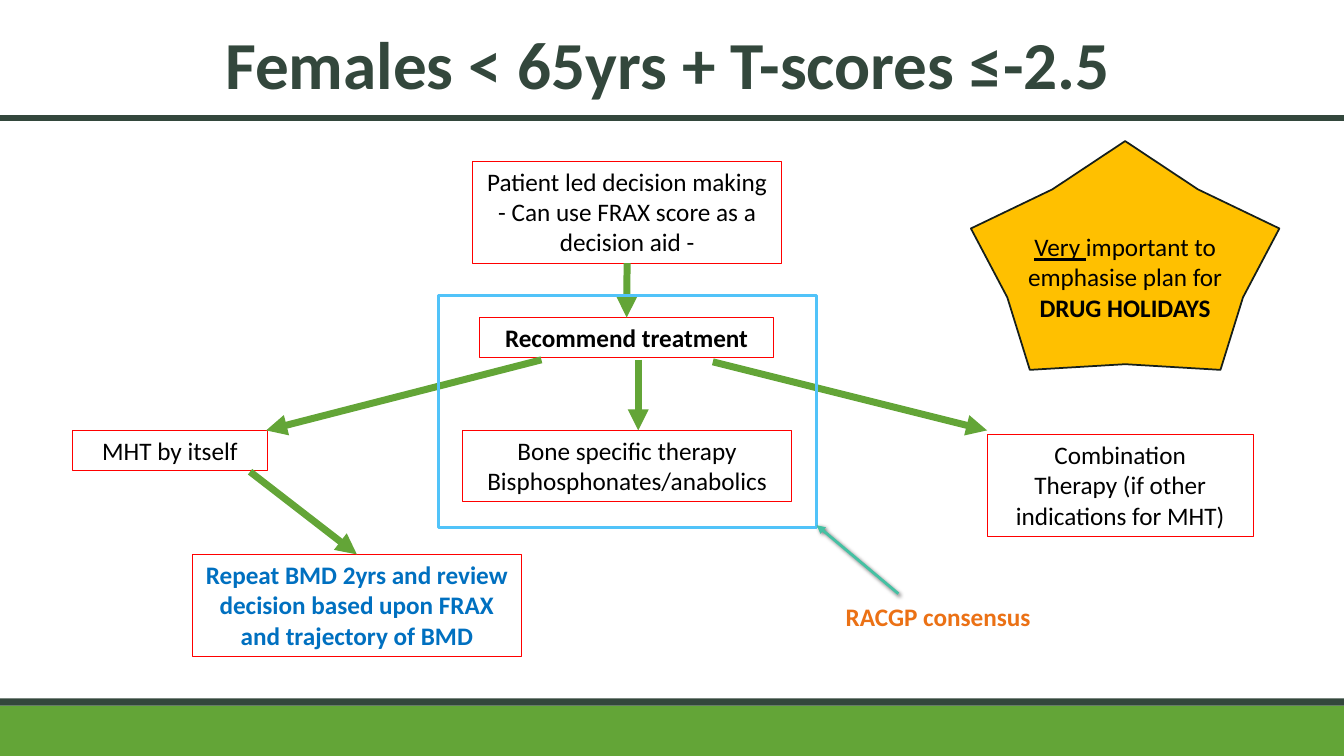
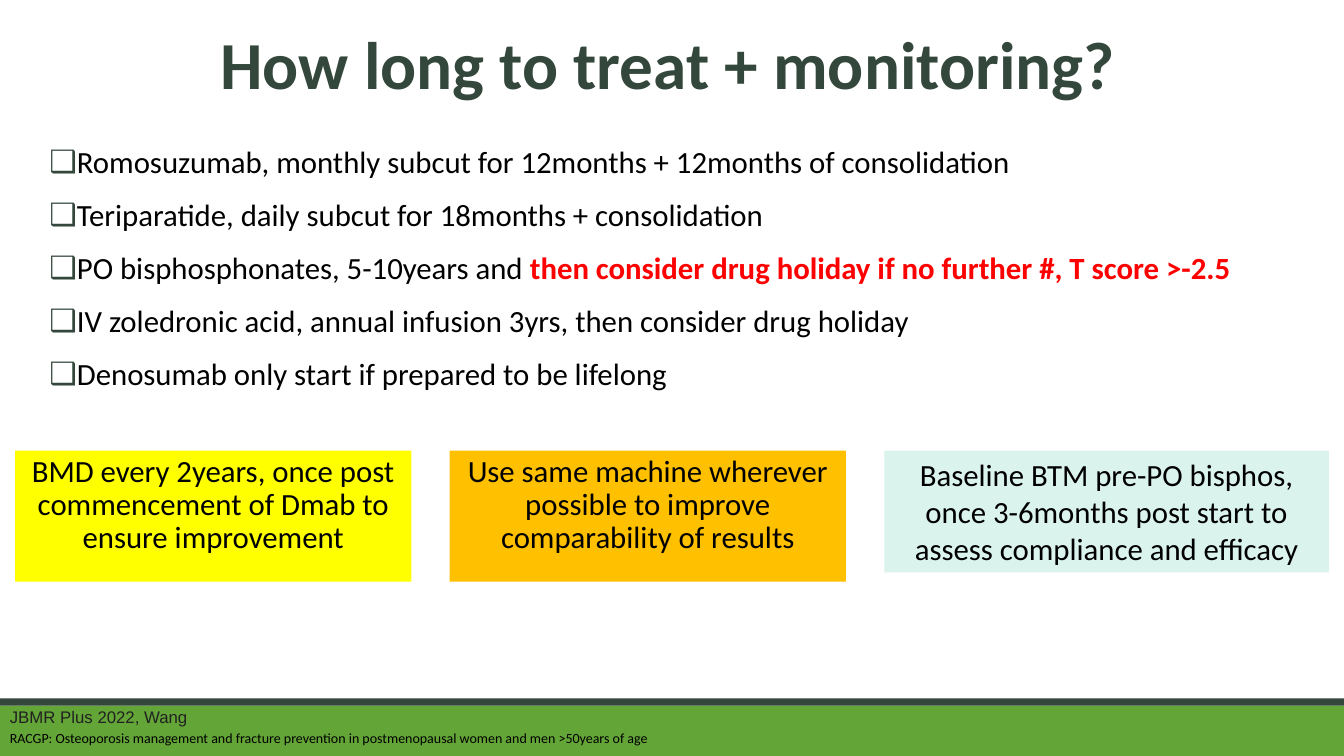
from lxml import etree
from pptx import Presentation
from pptx.dml.color import RGBColor
from pptx.enum.shapes import MSO_CONNECTOR as CONN, MSO_SHAPE as SHAPE
from pptx.enum.text import MSO_ANCHOR as ANCHOR, MSO_AUTO_SIZE as AUTO, PP_ALIGN as ALIGN
from pptx.oxml.ns import qn
from pptx.util import Inches, Pt

FONT = "Calibri"
WIDTH, HEIGHT = 13.33, 7.5
BLACK, WHITE, RED = "000000", "FFFFFF", "FF0000"
GREEN, DARK, AMBER = "63A537", "33473C", "FFC000"


def paint(target, color):
    """Colour a fill, a line fill or a font."""
    if hasattr(target, "solid"):
        target.solid()
        target.fore_color.rgb = RGBColor.from_string(color)
    else:
        target.color.rgb = RGBColor.from_string(color)


def add_bullet(p, char, color):
    """Give a paragraph a coloured bullet with a small hanging indent."""
    pPr = p._p.get_or_add_pPr()
    pPr.set("marL", str(Inches(0.1)))
    pPr.set("indent", str(Inches(-0.1)))
    clr = etree.SubElement(pPr, qn("a:buClr"))
    etree.SubElement(clr, qn("a:srgbClr"), val=color)
    etree.SubElement(pPr, qn("a:buFont"), typeface="Arial")
    etree.SubElement(pPr, qn("a:buChar"), char=char)


def write(tf, paras, size=18, color=BLACK, bold=False, font=FONT, align=ALIGN.CENTER,
          anchor=ANCHOR.TOP, spacing=1.0, before=0, after=0, bullet=None):
    """Fill a text frame with paragraphs of plain strings or (text, format) runs."""
    tf.word_wrap, tf.auto_size, tf.vertical_anchor = True, AUTO.NONE, anchor
    for i, runs in enumerate([paras] if isinstance(paras, str) else paras):
        p = tf.add_paragraph() if i else tf.paragraphs[0]
        if bullet:
            add_bullet(p, bullet, DARK)
        p.alignment, p.line_spacing = align, spacing
        p.space_before, p.space_after = Pt(before if i else 0), Pt(after)
        for text, fmt in [(runs, {})] if isinstance(runs, str) else runs:
            r = p.add_run()
            r.text = text
            r.font.name, r.font.size = font, Pt(size)
            r.font.bold = fmt.get("bold", bold)
            r.font.underline = fmt.get("underline", False)
            paint(r.font, fmt.get("color", color))


def place(sp, x, y, w, h):
    """Move and size a shape in inches."""
    sp.left, sp.top, sp.width, sp.height = map(Inches, (x, y, w, h))


def add_box(s, x, y, w, h, paras=None, fill=None, line=None, weight=0.75,
            shape=SHAPE.RECTANGLE, **fmt):
    """Draw a preset shape with optional fill, outline and text."""
    sp = s.shapes.add_shape(shape, *map(Inches, (x, y, w, h)))
    sp.shadow.inherit = False
    if fill:
        paint(sp.fill, fill)
    else:
        sp.fill.background()
    if line:
        paint(sp.line.fill, line)
        sp.line.width = Pt(weight)
    else:
        sp.line.fill.background()
    if paras:
        write(sp.text_frame, paras, **fmt)
    return sp


def add_label(s, x, y, w, h, paras, **fmt):
    """Add a plain text box."""
    write(s.shapes.add_textbox(*map(Inches, (x, y, w, h))).text_frame, paras, **fmt)


def add_line(s, x1, y1, x2, y2, color=GREEN, weight=5, arrow=True, shadow=False):
    """Draw a straight line, with an arrowhead at its end by default."""
    c = s.shapes.add_connector(CONN.STRAIGHT, *map(Inches, (x1, y1, x2, y2)))
    paint(c.line.fill, color)
    c.line.width = Pt(weight)
    if arrow:
        etree.SubElement(c.line._get_or_add_ln(), qn("a:tailEnd"), type="triangle")
    effects = etree.SubElement(c._element.spPr, qn("a:effectLst"))
    if shadow:
        outer = etree.SubElement(effects, qn("a:outerShdw"), blurRad=str(Pt(3)),
                                 dist=str(Pt(2)), dir="2700000", rotWithShape="0")
        clr = etree.SubElement(outer, qn("a:srgbClr"), val=BLACK)
        etree.SubElement(clr, qn("a:alpha"), val="60000")
    return c


def add_master_bands(prs, s):
    """Draw the footer bands and move them to the slide master."""
    tree = prs.slide_master.shapes.element
    for i, (y, h, color) in enumerate([(7, 0.5, GREEN), (6.93, 0.07, DARK)]):
        tree.insert(2 + i, add_box(s, 0, y, WIDTH, h, fill=color)._element)


def set_title(s, text):
    """Place and format the slide title."""
    place(s.shapes.title, 0.15, 0.29, 12.95, 0.99)
    write(s.shapes.title.text_frame, text, size=48, color=DARK, bold=True, spacing=0.85)


def decision_tree(s, x, y):
    """Draw the treatment flow chart from its top left corner."""
    def node(dx, dy, w, h, paras, **fmt):
        """Draw one red outlined step."""
        return add_box(s, x + dx, y + dy, w, h, paras, line=RED, **fmt)

    def arrow(x1, y1, x2, y2, **fmt):
        """Draw an arrow between two points of the chart."""
        return add_line(s, x + x1, y + y1, x + x2, y + y2, **fmt)

    patient = node(3.97, 0, 3.06, 1.01, ["Patient led decision making",
                                         "- Can use FRAX score as a decision aid -"])
    recommend = node(4.04, 1.55, 2.91, 0.4, "Recommend treatment", fill=WHITE, bold=True)
    node(0, 2.67, 1.93, 0.4, "MHT by itself")
    node(3.87, 2.67, 3.26, 0.71, "Bone specific therapy Bisphosphonates/anabolics")
    node(9.07, 2.71, 2.64, 1.01, ["Combination", "Therapy (if other indications for MHT)"])
    repeat = node(1.19, 3.9, 3.26, 1.01, "Repeat BMD 2yrs and review decision based upon "
                  "FRAX and trajectory of BMD", color="0070C0", bold=True)

    first = arrow(5.5, 1.01, 5.5, 1.55)
    first.begin_connect(patient, 2)
    first.end_connect(recommend, 0)
    for ends in [(5.61, 1.97, 5.61, 2.67), (6.35, 1.99, 9.07, 2.67),
                 (4.65, 1.97, 1.92, 2.67)]:
        arrow(*ends)
    arrow(1.76, 3.08, 2.82, 3.9).end_connect(repeat, 0)

    add_box(s, x + 3.63, y + 1.33, 3.75, 2.3, line="51C3F9", weight=2)
    arrow(8.19, 4.29, 7.38, 3.61, color="44C1A3", weight=2, shadow=True)
    add_label(s, x + 7.38, y + 4.32, 2.41, 0.4, "RACGP consensus", color="EB7115", bold=True)


def holiday_star(s, x, y, w, h):
    """Draw the star with the drug holiday reminder."""
    star = add_box(s, x, y, w, h, [[("Very ", {"underline": True}),
                                    ("important to emphasise plan for ", {}),
                                    ("DRUG HOLIDAYS", {"bold": True})]],
                   fill=AMBER, line="161F1A", weight=1.25, shape=SHAPE.STAR_5_POINT,
                   anchor=ANCHOR.MIDDLE)
    star.adjustments[0] = 0.382


def treatment_list(s, x, y, w, h):
    """Fill the body placeholder with the treatment durations."""
    body = s.placeholders[1]
    place(body, x, y, w, h)
    write(body.text_frame, [
        "Romosuzumab, monthly subcut for 12months + 12months of consolidation",
        "Teriparatide, daily subcut for 18months + consolidation",
        [("PO bisphosphonates, 5-10years and ", {}),
         ("then consider drug holiday if no further #, T score >-2.5",
          {"color": RED, "bold": True})],
        "IV zoledronic acid, annual infusion 3yrs, then consider drug holiday",
        "Denosumab only start if prepared to be lifelong",
    ], size=22, align=ALIGN.LEFT, spacing=0.9, before=12, after=2, bullet="❑")


def monitoring_row(s, x, y, gap):
    """Draw the three monitoring notes side by side."""
    for w, h, fill, spacing, text in [
        (3.93, 1.3, "FFFF00", 0.9,
         "BMD every 2years, once post commencement of Dmab to ensure improvement"),
        (3.93, 1.3, AMBER, 0.9,
         "Use same machine wherever possible to improve comparability of results"),
        (4.41, 1.21, "DAF3ED", 1.0,
         "Baseline BTM pre-PO bisphos, once 3-6months post start to assess compliance "
         "and efficacy"),
    ]:
        add_box(s, x, y, w, h, text, fill=fill, size=22, spacing=spacing)
        x += w + gap


def sources(s, x, y):
    """Write the two references over the footer band."""
    add_label(s, x, y, 6.67, 0.5, "JBMR Plus 2022, Wang", size=12, color="212121",
              font="Arial", align=ALIGN.LEFT)
    add_label(s, x, y + 0.23, 6.9, 0.27,
              "RACGP: Osteoporosis management and fracture prevention in "
              "postmenopausal women and men >50years of age", size=10, align=ALIGN.LEFT)


def females_slide(prs):
    """Build the slide on treatment decisions."""
    s = prs.slides.add_slide(prs.slide_layouts[5])
    add_master_bands(prs, s)
    set_title(s, "Females < 65yrs + T-scores ≤-2.5")
    add_line(s, 0, 1.17, WIDTH, 1.17, color=DARK, weight=4.5, arrow=False)
    decision_tree(s, 0.72, 1.6)
    holiday_star(s, 9.63, 1.4, 3.06, 2.27)


def monitoring_slide(prs):
    """Build the slide on duration and monitoring."""
    s = prs.slides.add_slide(prs.slide_layouts[1])
    set_title(s, "How long to treat + monitoring?")
    treatment_list(s, 0.39, 1.41, 12.42, 2.59)
    monitoring_row(s, 0.15, 4.47, 0.38)
    sources(s, 0, 6.96)


def main():
    """Build and save the presentation."""
    prs = Presentation()
    prs.slide_width, prs.slide_height = Inches(WIDTH), Inches(HEIGHT)
    females_slide(prs)
    monitoring_slide(prs)
    prs.save("out.pptx")


if __name__ == "__main__":
    main()
